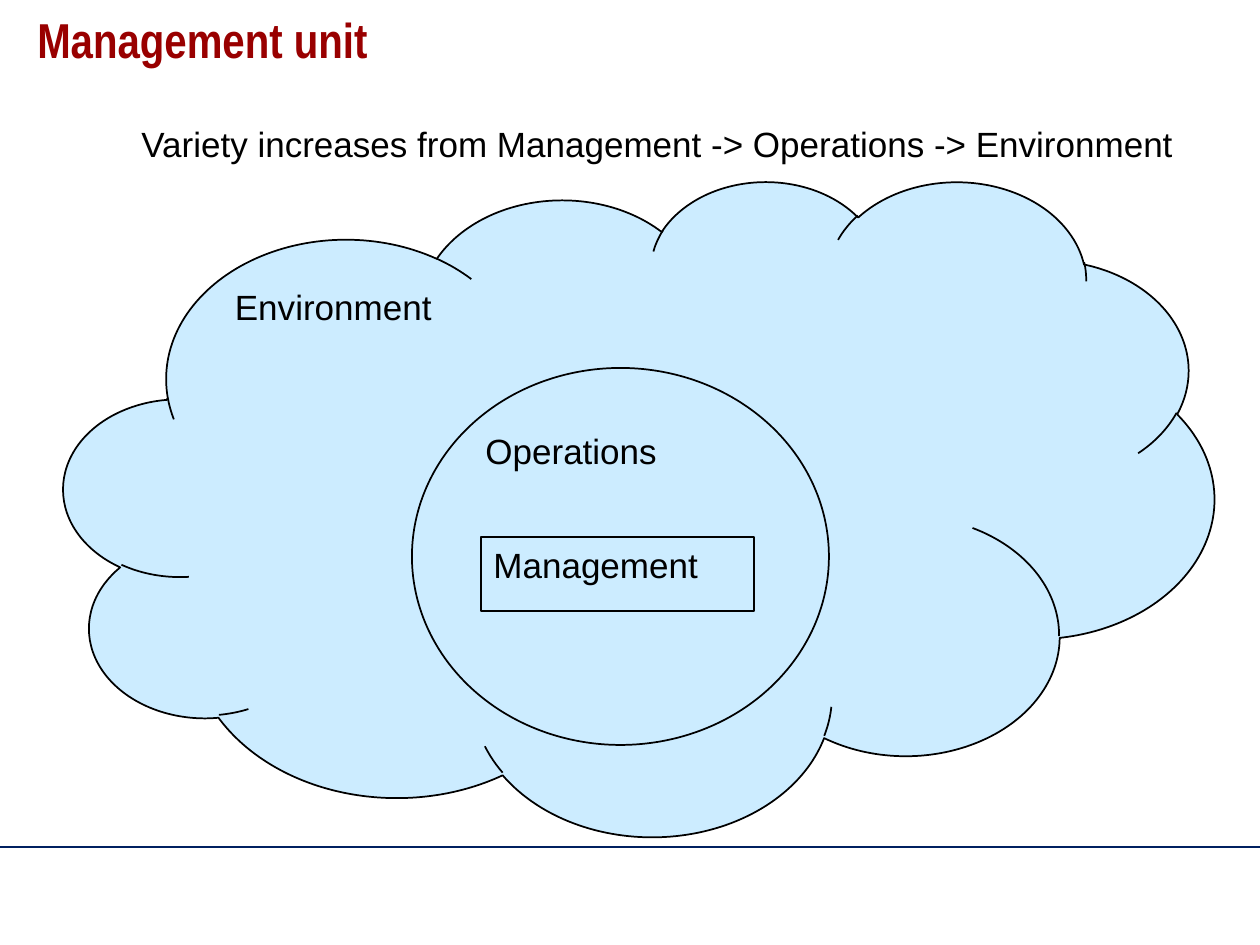
import pptx
import pptx.dml.color
import pptx.enum.shapes
import pptx.enum.text
import pptx.oxml
import pptx.util
from dataclasses import dataclass

SHAPE = pptx.enum.shapes.MSO_SHAPE


def px(n):
    return pptx.util.Emu(round(n * 914400 / 126))


def rgb(value):
    return pptx.dml.color.RGBColor.from_string(value)


@dataclass
class Theme:
    title: str = "990000"
    ink: str = "000000"
    fill: str = "CCECFF"
    rule: str = "002060"
    title_font: str = "Arial Narrow"
    body_font: str = "Arial"
    title_size: int = 28
    body_size: int = 20
    outline: float = 1
    rule_width: float = 0.75


class Painter:
    def __init__(self, s, theme):
        self.s = s
        self.theme = theme

    def add_text(self, sp, text, font, size, color, bold=False, wrap=False):
        tf = sp.text_frame
        tf.word_wrap = wrap
        tf.vertical_anchor = pptx.enum.text.MSO_ANCHOR.TOP
        p = tf.paragraphs[0]
        p.alignment = pptx.enum.text.PP_ALIGN.LEFT
        r = p.add_run()
        r.text = text
        r.font.name = font
        r.font.size = pptx.util.Pt(size)
        r.font.bold = bold
        r.font.color.rgb = rgb(color)
        return p

    def rule(self, x1, y1, x2, y2):
        line = self.s.shapes.add_connector(
            pptx.enum.shapes.MSO_CONNECTOR.STRAIGHT, px(x1), px(y1), px(x2), px(y2))
        line.line.color.rgb = rgb(self.theme.rule)
        line.line.width = pptx.util.Pt(self.theme.rule_width)
        effects = pptx.oxml.parse_xml(
            '<a:effectLst xmlns:a="http://schemas.openxmlformats.org/drawingml/2006/main"/>')
        line._element.spPr.append(effects)

    def title(self, text, *box):
        t = self.theme
        sp = self.s.shapes.add_textbox(*map(px, box))
        p = self.add_text(sp, text, t.title_font, t.title_size, t.title, bold=True, wrap=True)
        p.line_spacing = 0.9

    def caption(self, text, *box):
        t = self.theme
        sp = self.s.shapes.add_textbox(*map(px, box))
        self.add_text(sp, text, t.body_font, t.body_size, t.ink)
        sp.text_frame.auto_size = pptx.enum.text.MSO_AUTO_SIZE.SHAPE_TO_FIT_TEXT

    def region(self, kind, text, *box):
        t = self.theme
        sp = self.s.shapes.add_shape(kind, *map(px, box))
        sp.shadow.inherit = False
        sp.fill.solid()
        sp.fill.fore_color.rgb = rgb(t.fill)
        sp.line.color.rgb = rgb(t.ink)
        sp.line.width = pptx.util.Pt(t.outline)
        self.add_text(sp, text, t.body_font, t.body_size, t.ink)


def main():
    prs = pptx.Presentation()
    prs.slide_width, prs.slide_height = px(1260), px(945)
    s = prs.slides.add_slide(prs.slide_layouts[6])
    painter = Painter(s, Theme())
    painter.rule(0, 847, 1260, 847)
    painter.title("Management unit", 25, 10, 1211, 105)
    painter.region(SHAPE.CLOUD, "Environment", 64, 180, 1150, 655)
    painter.region(SHAPE.OVAL, "Operations", 412, 368, 417, 377)
    painter.region(SHAPE.RECTANGLE, "Management", 481, 537, 273, 74)
    painter.caption("Variety increases from Management -> Operations -> Environment",
                    129, 116, 1075, 55)
    prs.save("out.pptx")


if __name__ == "__main__":
    main()
